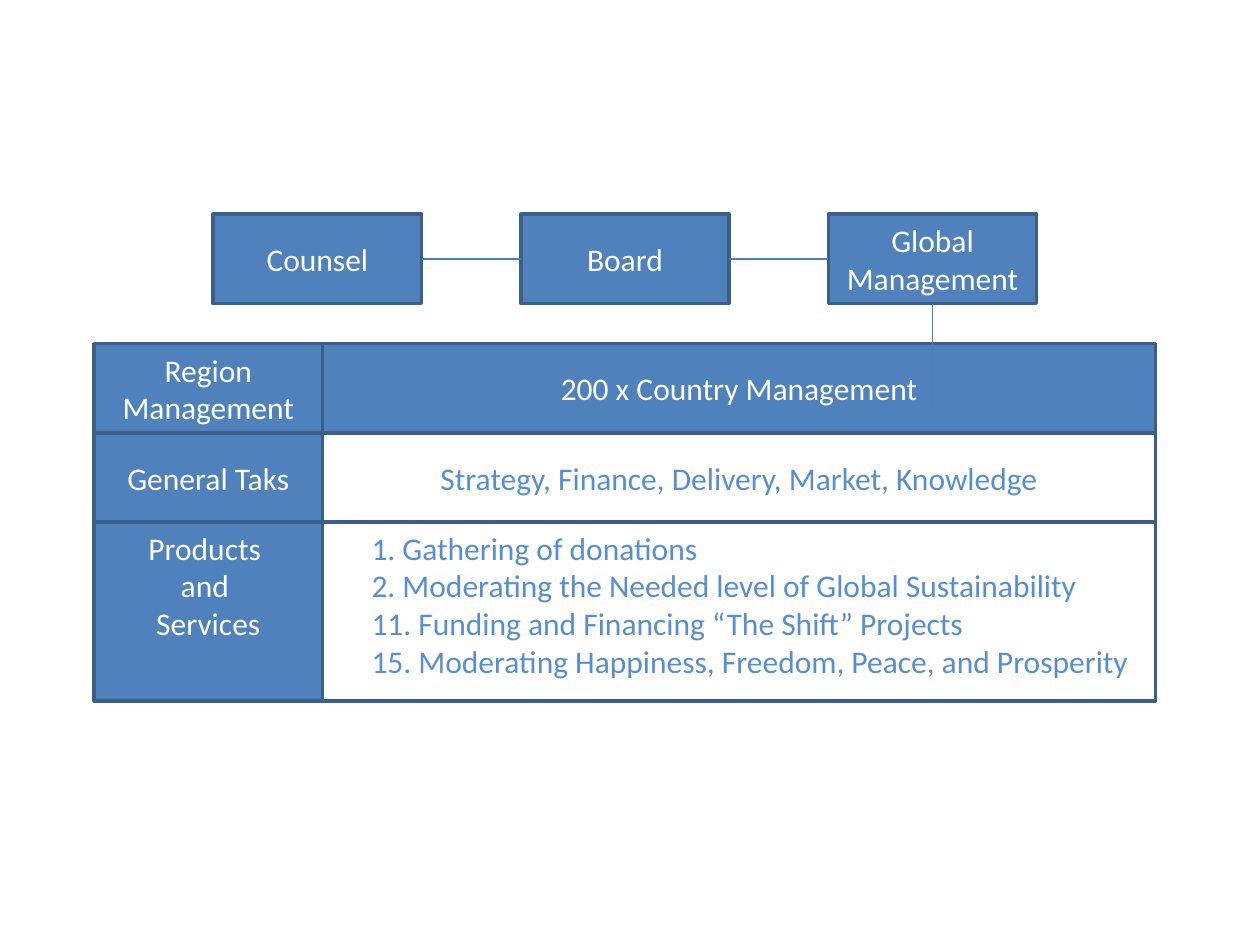
from dataclasses import dataclass

from lxml.etree import SubElement
from pptx import Presentation
from pptx.dml.color import RGBColor
from pptx.enum.shapes import MSO_CONNECTOR as Connector, MSO_SHAPE as Shape
from pptx.enum.text import MSO_ANCHOR as Anchor, PP_ALIGN as Align
from pptx.oxml.ns import qn
from pptx.util import Cm, Pt


@dataclass(frozen=True)
class Theme:
    blue: RGBColor = RGBColor.from_string("4F81BD")
    white: RGBColor = RGBColor.from_string("FFFFFF")
    border: RGBColor = RGBColor.from_string("3A5F8C")
    link: RGBColor = RGBColor.from_string("4B7EBC")
    text: RGBColor = RGBColor.from_string("558ED5")
    font: str = "Calibri"
    size: Pt = Pt(18)
    border_width: Pt = Pt(2)
    link_width: Pt = Pt(0.75)


theme = Theme()

deck = Presentation()
deck.slide_width, deck.slide_height = Cm(25.4), Cm(19.05)
page = deck.slides.add_slide(deck.slide_layouts[6])


def add_box(left, top, width, height, lines, filled=True, anchor=Anchor.MIDDLE,
            align=Align.CENTER, indent=0):
    box = page.shapes.add_shape(Shape.RECTANGLE, Cm(left), Cm(top), Cm(width), Cm(height))
    box.shadow.inherit = False
    box.fill.solid()
    box.fill.fore_color.rgb = theme.blue if filled else theme.white
    box.line.color.rgb = theme.border
    box.line.width = theme.border_width
    frame = box.text_frame
    frame.word_wrap = True
    frame.vertical_anchor = anchor
    frame.text = "\n".join(lines)
    for para in frame.paragraphs:
        para.alignment = align
        para.font.name = theme.font
        para.font.size = theme.size
        para.font.color.rgb = theme.white if filled else theme.text
        if indent:
            para._p.get_or_add_pPr().set("marL", str(Cm(indent)))


def add_link(x1, y1, x2, y2):
    link = page.shapes.add_connector(Connector.STRAIGHT, Cm(x1), Cm(y1), Cm(x2), Cm(y2))
    link.line.color.rgb = theme.link
    link.line.width = theme.link_width
    SubElement(link._element.spPr, qn("a:effectLst"))


# Grid: label column beside a wide content column
label_left, label_width, content_width = 1.9, 4.6, 16.8
content_left = label_left + label_width
row_height = 1.8
grid_top = 6.93

# Management and task rows
rows = [
    ("Region Management", "200 x Country Management", True),
    ("General Taks", "Strategy, Finance, Delivery, Market, Knowledge", False),
]
for index, (label, content, filled) in enumerate(rows):
    top = grid_top + index * row_height
    add_box(label_left, top, label_width, row_height, [label])
    add_box(content_left, top, content_width, row_height, [content], filled)

# Products and services row, twice as tall
products_top = grid_top + len(rows) * row_height
add_box(label_left, products_top, label_width, 2 * row_height,
        ["Products ", "and ", "Services"], anchor=Anchor.TOP)
products = [
    "1. Gathering of donations",
    "2. Moderating the Needed level of Global Sustainability",
    "11. Funding and Financing “The Shift” Projects",
    "15. Moderating Happiness, Freedom, Peace, and Prosperity",
]
add_box(content_left, products_top, content_width, 2 * row_height, products,
        filled=False, anchor=Anchor.TOP, align=Align.LEFT, indent=0.74)

# Governing bodies, each linked to the one before
body_left, body_top, body_width, body_step = 4.3, 4.32, 4.2, 6.2
for index, body in enumerate(["Counsel", "Board", "Global Management"]):
    left = body_left + index * body_step
    add_box(left, body_top, body_width, row_height, [body])
    if index:
        middle = body_top + row_height / 2
        add_link(left - body_step + body_width, middle, left, middle)

# Link from global management down into the grid
center = left + body_width / 2
add_link(center, body_top + row_height, center, 8.13)

deck.save("out.pptx")
